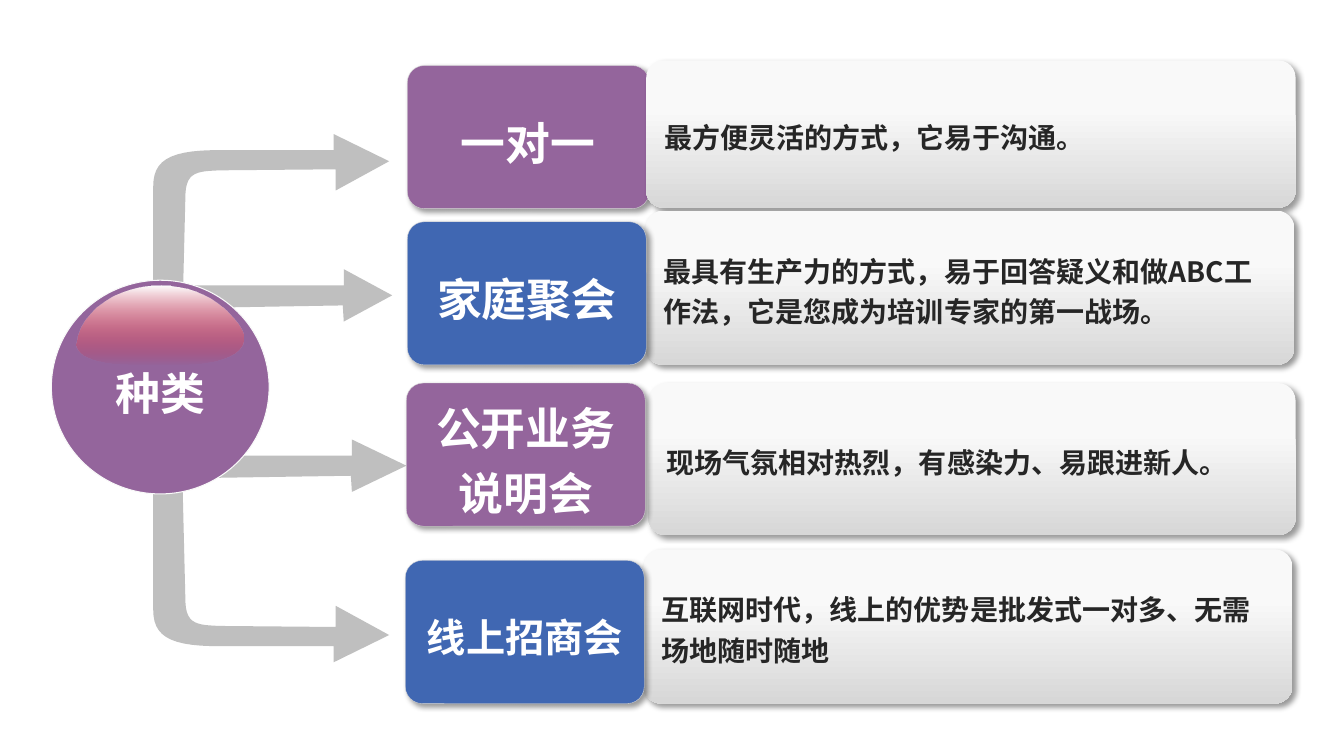
from lxml.etree import SubElement
from pptx import Presentation
from pptx.dml.color import RGBColor
from pptx.enum.shapes import MSO_SHAPE
from pptx.enum.text import MSO_ANCHOR, PP_ALIGN
from pptx.oxml.ns import qn
from pptx.util import Inches, Pt

CJK = "Noto Sans CJK SC"
PURPLE, BLUE, GREY = "94659C", "4067B2", "BFBFBF"


def color(value):
    return RGBColor.from_string(value)


def add_text(sp, text, size=20, font=CJK, fill="262626", align=PP_ALIGN.LEFT, side=0.13):
    tf = sp.text_frame
    tf.word_wrap = True
    tf.vertical_anchor = MSO_ANCHOR.MIDDLE
    tf.margin_left = tf.margin_right = Inches(side)
    tf.margin_top = tf.margin_bottom = Inches(0.07)
    p = tf.paragraphs[0]
    p.alignment = align
    p.line_spacing = 1.2
    r = p.add_run()
    r.text = text
    r.font.size = Pt(size)
    r.font.bold = True
    r.font.name = font
    r.font.color.rgb = color(fill)
    SubElement(r.font._element, qn("a:ea"), typeface=font)


def fill_gradient(sp, *stops):
    """Fill top to bottom with two (position, colour) stops."""
    sp.fill.gradient()
    sp.fill.gradient_angle = 270
    for stop, (position, value) in zip(sp.fill.gradient_stops, stops):
        stop.position = position
        stop.color.rgb = color(value)


def add_shadow(sp):
    sp.shadow.inherit = False
    effects = sp._element.spPr.find(qn("a:effectLst"))
    shadow = SubElement(effects, qn("a:outerShdw"), blurRad=str(Pt(4)), dist=str(Pt(3)),
                        dir="2700000", algn="tl", rotWithShape="0")
    black = SubElement(shadow, qn("a:srgbClr"), val="000000")
    SubElement(black, qn("a:alpha"), val="40000")


def add_outline(slide, start, *steps):
    """Draw a closed outline; a step is a point (x, y) or a cubic curve of six numbers."""
    points = [start]
    for step in steps:
        if len(step) == 2:
            points.append(step)
            continue
        curve = [points[-1], step[:2], step[2:4], step[4:]]
        for i in range(1, 13):
            t = i / 12
            weights = ((1 - t) ** 3, 3 * t * (1 - t) ** 2, 3 * t * t * (1 - t), t ** 3)
            points.append(tuple(sum(w * c[axis] for w, c in zip(weights, curve))
                                for axis in (0, 1)))
    points = [(Inches(x), Inches(y)) for x, y in points]
    builder = slide.shapes.build_freeform(*points[0], scale=1.0)
    builder.add_line_segments(points[1:], close=True)
    sp = builder.convert_to_shape()
    sp.shadow.inherit = False
    sp.line.fill.background()
    return sp


def add_bent_arrow(slide, x, y, way):
    """Start from the hub at (x, y), going down for way 1 and up for way -1."""
    steps = [(0.29, 0.24), (0.32, 1.46), (0.33, 1.68, 0.45, 1.68, 0.66, 1.69), (1.81, 1.7),
             (1.81, 1.49), (2.34, 1.78), (1.79, 2.05), (1.79, 1.89),
             (1.79, 1.89, 1.02, 1.89, 0.58, 1.89), (0.15, 1.88, 0, 1.78, 0, 1.53),
             (0, 0.21), (0.05, 0, 0.23, 0.02, 0.29, 0.24)]
    placed = [tuple(y + way * v if i % 2 else x + v for i, v in enumerate(step))
              for step in steps]
    add_outline(slide, *placed).fill.solid()
    slide.shapes[-1].fill.fore_color.rgb = color(GREY)


def add_straight_arrow(slide, left, tip, y, head):
    neck = tip - head
    sp = add_outline(slide, (left, y + 0.13), (neck - 0.01, y + 0.1), (neck, y + 0.26),
                     (tip, y), (neck, y - 0.26), (neck, y - 0.1), (left, y - 0.1))
    sp.fill.solid()
    sp.fill.fore_color.rgb = color(GREY)


def add_hub(slide, x, y, w, h):
    sp = slide.shapes.add_shape(MSO_SHAPE.OVAL, Inches(x), Inches(y), Inches(w), Inches(h))
    sp.shadow.inherit = False
    sp.fill.solid()
    sp.fill.fore_color.rgb = color(PURPLE)
    sp.line.color.rgb = color("F9F9F9")
    sp.line.width = Pt(0.75)
    add_text(sp, "种类", size=32, font="Arial", fill="FFFFFF", align=PP_ALIGN.CENTER, side=0.1)

    dome = [(0.25, 0.63), (0.29, 0.29, 0.69, 0.04, 1.09, 0.05),
            (1.47, 0.05, 1.74, 0.25, 1.89, 0.49), (1.99, 0.72, 1.69, 0.84, 1.25, 0.84),
            (0.85, 0.84), (0.49, 0.84, 0.25, 0.77, 0.25, 0.63)]
    gloss = add_outline(slide, *[tuple(v + (y if i % 2 else x) for i, v in enumerate(step))
                                 for step in dome])
    fill_gradient(gloss, (0, "FFFFFF"), (1, "FF0000"))
    last = gloss._element.spPr.findall(".//" + qn("a:srgbClr"))[-1]
    SubElement(last, qn("a:alpha"), val="0")


def add_rounded(slide, box, adjustment):
    sp = slide.shapes.add_shape(MSO_SHAPE.ROUNDED_RECTANGLE, *map(Inches, box))
    sp.adjustments[0] = adjustment
    add_shadow(sp)
    return sp


def add_label(slide, box, text, fill, size):
    sp = add_rounded(slide, box, 0.119)
    sp.fill.solid()
    sp.fill.fore_color.rgb = color(fill)
    sp.line.color.rgb = color("D7D7D7")
    sp.line.width = Pt(0.25)
    add_text(sp, text, size=size, fill="FFFFFF", align=PP_ALIGN.CENTER, side=0.14)


def add_panel(slide, box, text):
    sp = add_rounded(slide, box, 0.115)
    fill_gradient(sp, (0.33, "F9F9F9"), (1, "D7D7D7"))
    sp.line.fill.background()
    add_text(sp, text)


def add_row(slide, label_box, panel_box, label, text, fill, size=32, panel_in_front=False):
    if not panel_in_front:
        add_panel(slide, panel_box, text)
    add_label(slide, label_box, label, fill, size)
    if panel_in_front:
        add_panel(slide, panel_box, text)


def main():
    prs = Presentation()
    prs.slide_width, prs.slide_height = Inches(13.33), Inches(7.5)
    slide = prs.slides.add_slide(prs.slide_layouts[6])

    add_bent_arrow(slide, 1.52, 4.52, 1)
    add_straight_arrow(slide, 1.54, 4.03, 4.62, 0.54)
    add_straight_arrow(slide, 1.65, 3.89, 2.93, 0.48)
    add_bent_arrow(slide, 1.52, 3.38, -1)
    add_hub(slide, 0.51, 2.78, 2.16, 2.12)

    add_row(slide, (4.04, 0.65, 2.4, 1.42), (6.41, 0.6, 6.44, 1.46), "一对一",
            "最方便灵活的方式，它易于沟通。", PURPLE, panel_in_front=True)
    add_row(slide, (4.04, 2.2, 2.37, 1.42), (6.4, 2.09, 6.44, 1.53), "家庭聚会",
            "最具有生产力的方式，易于回答疑义和做ABC工作法，它是您成为培训专家的第一战场。", BLUE)
    add_row(slide, (4.03, 3.8, 2.37, 1.42), (6.43, 3.8, 6.42, 1.51), "公开业务说明会",
            "现场气氛相对热烈，有感染力、易跟进新人。", PURPLE)
    add_row(slide, (4.02, 5.56, 2.37, 1.42), (6.38, 5.45, 6.44, 1.53), "线上招商会",
            "互联网时代，线上的优势是批发式一对多、无需场地随时随地", BLUE, size=28)
    prs.save("out.pptx")


if __name__ == "__main__":
    main()
